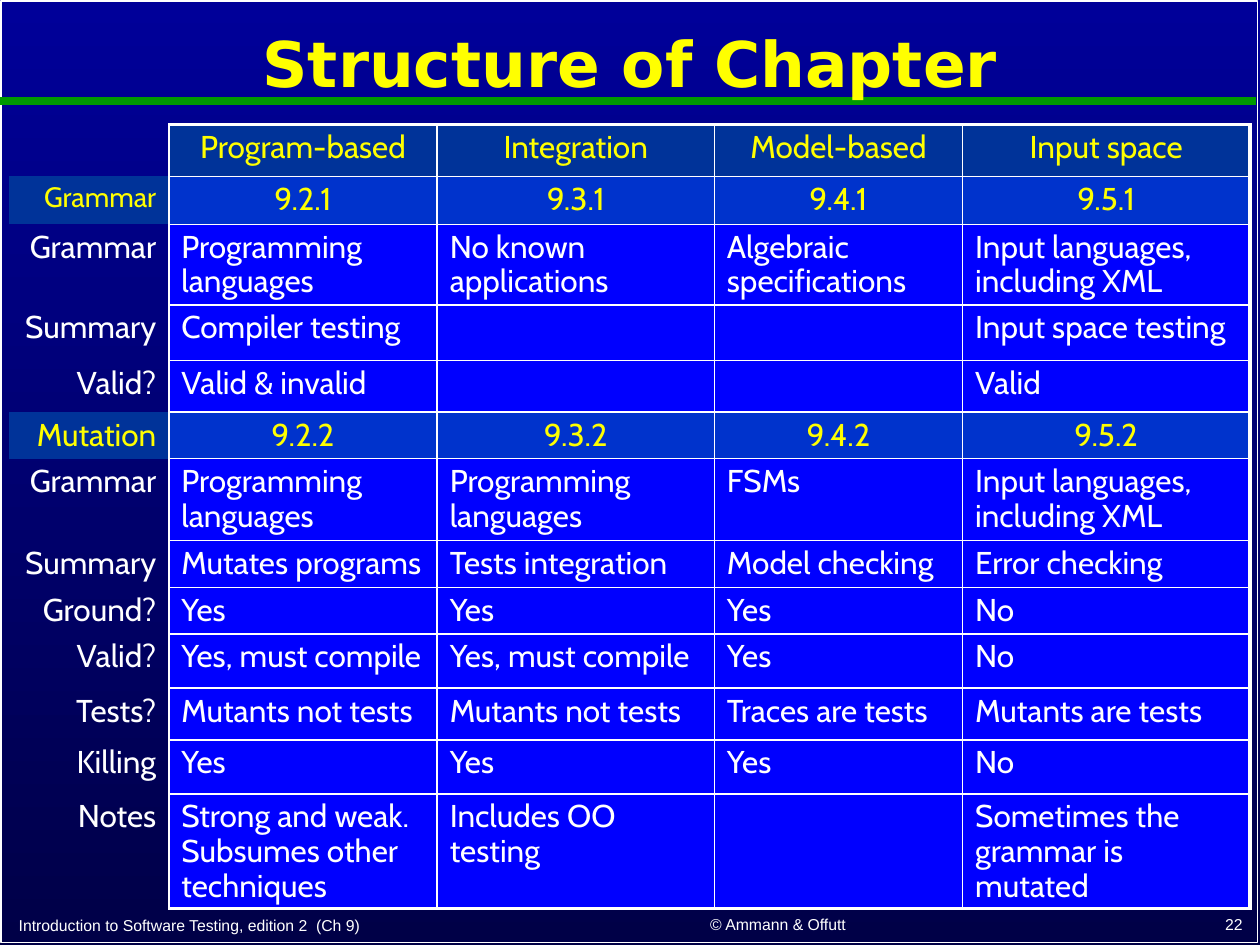
from lxml.etree import SubElement
from pptx import Presentation
from pptx.dml.color import RGBColor
from pptx.enum.shapes import MSO_CONNECTOR, MSO_SHAPE
from pptx.enum.text import MSO_ANCHOR, PP_ALIGN
from pptx.oxml import parse_xml
from pptx.oxml.ns import nsdecls, qn
from pptx.util import Inches, Pt

WHITE = RGBColor(0xFF, 0xFF, 0xFF)
YELLOW = RGBColor(0xFF, 0xFF, 0x00)
GREEN = RGBColor(0x00, 0x99, 0x00)
NAVY_TOP = RGBColor(0x00, 0x00, 0x99)
NAVY_BOTTOM = RGBColor(0x00, 0x00, 0x47)
HEADING_BLUE = RGBColor(0x00, 0x33, 0x99)
SECTION_BLUE = RGBColor(0x00, 0x33, 0xCC)
BODY_BLUE = RGBColor(0x00, 0x00, 0xFF)

NO_TABLE_STYLE = "{2D5ABB26-0587-4C30-8999-92F81FD0307C}"
THIN, THICK = 1, 2.25

TITLE = "Structure of Chapter"
# text, left, top, width, height, alignment
FOOTERS = [
    ("Introduction to Software Testing, edition 2  (Ch 9)", 0.05, 7.19, 4.25, 0.28, PP_ALIGN.LEFT),
    ("© Ammann & Offutt", 4.59, 7.18, 3.17, 0.28, PP_ALIGN.CENTER),
    ("22", 7.88, 7.17, 2.08, 0.29, PP_ALIGN.RIGHT),
]
COLUMN_WIDTHS = [1.27, 2.13, 2.2, 1.97, 2.28]
SECTION_ROWS = (1, 5)
# row height, then the cells
ROWS = [
    (0.41, ["", "Program-based", "Integration", "Model-based", "Input space"]),
    (0.38, ["Grammar", "9.2.1", "9.3.1", "9.4.1", "9.5.1"]),
    (0.64, ["Grammar", "Programming languages", "No known applications",
            "Algebraic specifications", "Input languages, including XML"]),
    (0.44, ["Summary", "Compiler testing", "", "", "Input space testing"]),
    (0.41, ["Valid?", "Valid & invalid", "", "", "Valid"]),
    (0.37, ["Mutation", "9.2.2", "9.3.2", "9.4.2", "9.5.2"]),
    (0.65, ["Grammar", "Programming languages", "Programming languages", "FSMs",
            "Input languages, including XML"]),
    (0.37, ["Summary", "Mutates programs", "Tests integration", "Model checking", "Error checking"]),
    (0.37, ["Ground?", "Yes", "Yes", "Yes", "No"]),
    (0.43, ["Valid?", "Yes, must compile", "Yes, must compile", "Yes", "No"]),
    (0.41, ["Tests?", "Mutants not tests", "Mutants not tests", "Traces are tests", "Mutants are tests"]),
    (0.43, ["Killing", "Yes", "Yes", "Yes", "No"]),
    (0.91, ["Notes", "Strong and weak. Subsumes other techniques", "Includes OO testing", "",
            "Sometimes the grammar is mutated"]),
]


def style_paragraph(paragraph, font_name, size, color, alignment):
    paragraph.font.name = font_name
    paragraph.font.size = Pt(size)
    paragraph.font.color.rgb = color
    paragraph.alignment = alignment


def add_text(slide, text, left, top, width, height, anchor):
    """Add a text box and return its paragraph."""
    box = slide.shapes.add_textbox(Inches(left), Inches(top), Inches(width), Inches(height))
    frame = box.text_frame
    frame.word_wrap = True
    frame.vertical_anchor = anchor
    frame.text = text
    return frame.paragraphs[0]


def add_frame_and_rule(slide):
    border = slide.shapes.add_shape(
        MSO_SHAPE.RECTANGLE, Inches(0.01), Inches(0.01), Inches(9.97), Inches(7.47))
    border.shadow.inherit = False
    border.fill.background()
    border.line.color.rgb = WHITE
    border.line.width = Pt(1)
    rule = slide.shapes.add_connector(
        MSO_CONNECTOR.STRAIGHT, Inches(0), Inches(0.8), Inches(9.97), Inches(0.8))
    rule.line.color.rgb = GREEN
    rule.line.width = Pt(4.5)
    SubElement(rule._element.spPr, qn("a:effectLst"))


def set_borders(cell, widths):
    """Draw white borders; widths maps L, R, T, B to points."""
    properties = cell._tc.get_or_add_tcPr()
    for index, side in enumerate(side for side in "LRTB" if side in widths):
        properties.insert(index, parse_xml(
            f'<a:ln{side} {nsdecls("a")} w="{Pt(widths[side])}"><a:solidFill>'
            f'<a:srgbClr val="{WHITE}"/></a:solidFill></a:ln{side}>'))


def style_cell(cell, row, column):
    is_label, is_heading = column == 0, row == 0
    is_section = row in SECTION_ROWS
    if is_label and not is_section:
        cell.fill.background()
    else:
        cell.fill.solid()
        cell.fill.fore_color.rgb = (
            HEADING_BLUE if is_label or is_heading else SECTION_BLUE if is_section else BODY_BLUE)

    if is_label:
        set_borders(cell, {"R": THIN})
    else:
        set_borders(cell, {
            "L": THIN,
            "R": THICK if column == len(COLUMN_WIDTHS) - 1 else THIN,
            "T": THICK if is_heading else THIN,
            "B": THICK if row == len(ROWS) - 1 else THIN,
        })

    if is_label:
        alignment = PP_ALIGN.RIGHT
    else:
        alignment = PP_ALIGN.CENTER if is_heading or is_section else PP_ALIGN.LEFT
    size = 16 if (row, column) == (1, 0) else 18
    paragraph = cell.text_frame.paragraphs[0]
    style_paragraph(paragraph, "Cabin", size, YELLOW if is_heading or is_section else WHITE, alignment)
    paragraph.line_spacing = 0.9


def add_structure_table(slide):
    heights = [height for height, _ in ROWS]
    frame = slide.shapes.add_table(
        len(ROWS), len(COLUMN_WIDTHS), Inches(0.07), Inches(0.99),
        Inches(sum(COLUMN_WIDTHS)), Inches(sum(heights)))
    table = frame.table
    table.first_row = table.horz_banding = False
    table._tbl.tblPr.find(qn("a:tableStyleId")).text = NO_TABLE_STYLE
    for column, width in zip(table.columns, COLUMN_WIDTHS):
        column.width = Inches(width)
    for row, (height, texts) in enumerate(ROWS):
        table.rows[row].height = Inches(height)
        for column, text in enumerate(texts):
            cell = table.cell(row, column)
            cell.text = text
            style_cell(cell, row, column)


def main():
    presentation = Presentation()
    presentation.slide_width, presentation.slide_height = Inches(10), Inches(7.5)
    slide = presentation.slides.add_slide(presentation.slide_layouts[6])

    background = slide.background.fill
    background.gradient()
    background.gradient_angle = 270
    for stop, color in zip(background.gradient_stops, (NAVY_TOP, NAVY_BOTTOM)):
        stop.color.rgb = color

    add_frame_and_rule(slide)
    for text, left, top, width, height, alignment in FOOTERS:
        paragraph = add_text(slide, text, left, top, width, height, MSO_ANCHOR.BOTTOM)
        style_paragraph(paragraph, "Arial", 9, WHITE, alignment)
    title = add_text(slide, TITLE, 0.17, 0.11, 9.66, 0.84, MSO_ANCHOR.MIDDLE)
    style_paragraph(title, "DejaVu Sans", 36, YELLOW, PP_ALIGN.CENTER)
    title.font.bold = True
    title.line_spacing = 0.9
    add_structure_table(slide)

    presentation.save("out.pptx")


if __name__ == "__main__":
    main()
